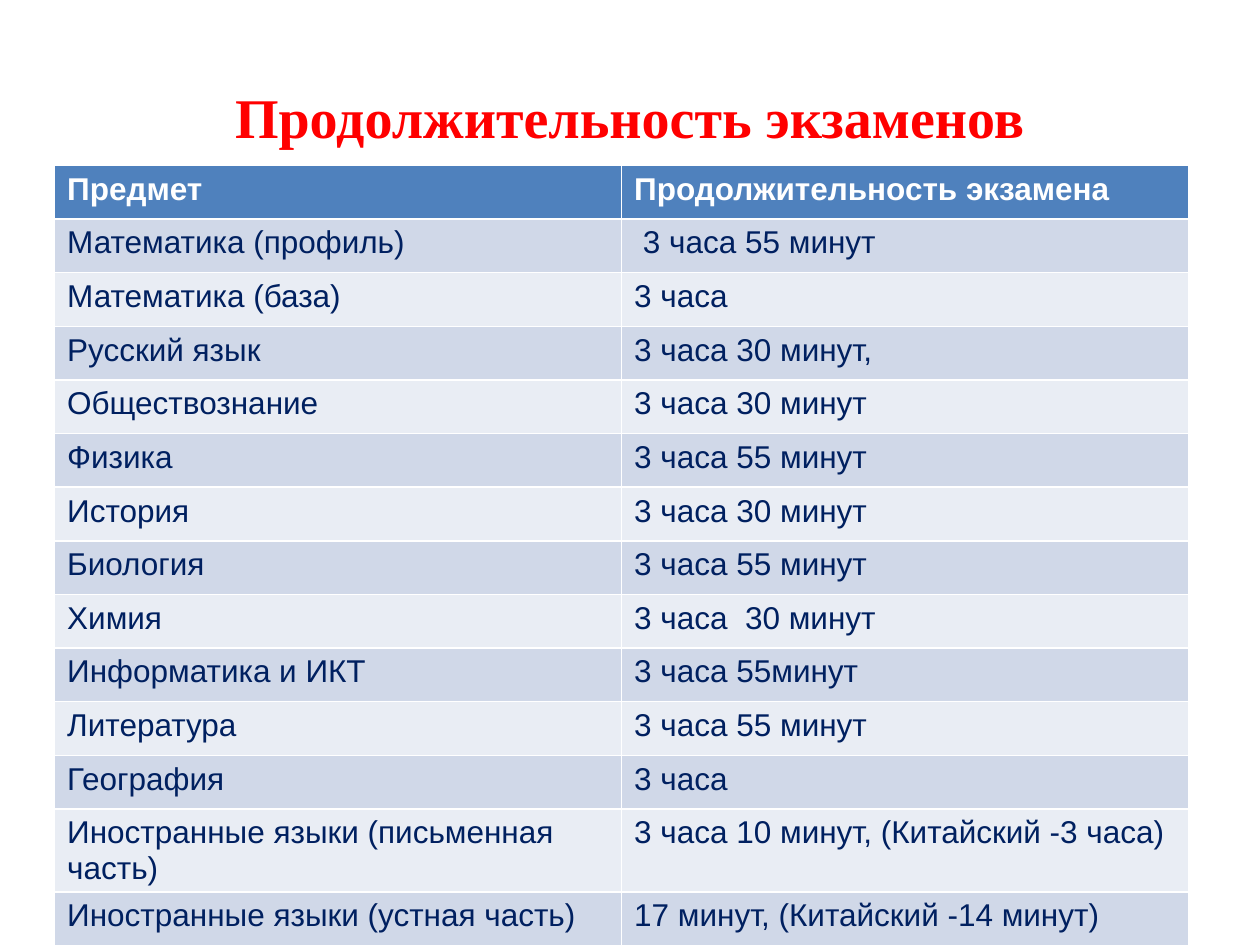
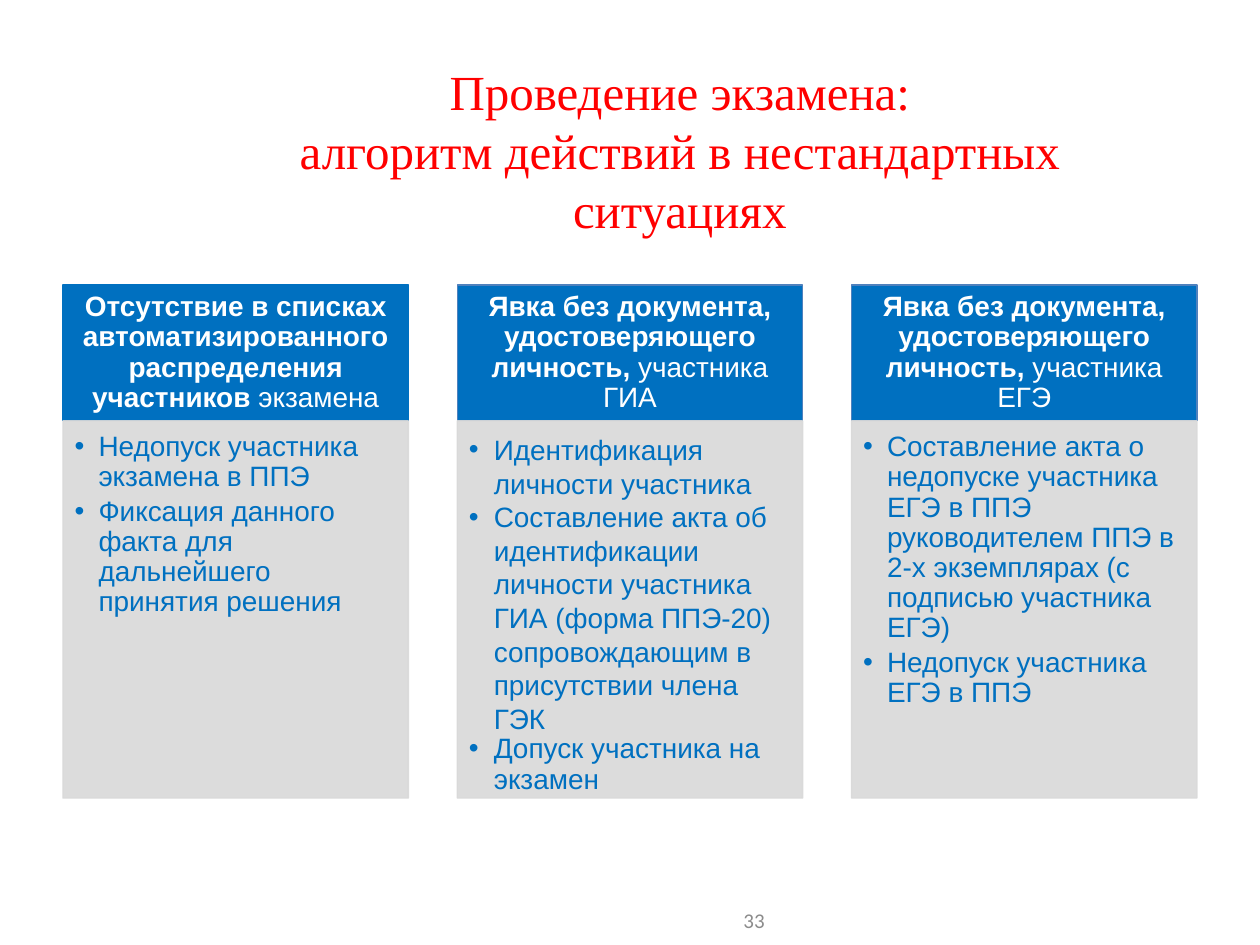
from lxml import etree
from pptx import Presentation
from pptx.dml.color import RGBColor
from pptx.enum import shapes, text
from pptx.oxml import ns
from pptx.util import Pt

RED, WHITE, NAVY = "FF0000", "FFFFFF", "002060"
BLUE, STEEL, GREY = "0070C0", "4F81BD", "D9D9D9"
BAND_FILLS = ("D0D8E8", "E9EDF4")
TITLE_FONT, BODY_FONT, NUMBER_FONT = "Times New Roman", "Arial", "Calibri"
CENTER, MIDDLE = text.PP_ALIGN.CENTER, text.MSO_ANCHOR.MIDDLE

EXAMS = [
    ("Предмет", "Продолжительность экзамена"),
    ("Математика (профиль)", " 3 часа 55 минут"),
    ("Математика (база)", "3 часа"),
    ("Русский язык", "3 часа 30 минут,"),
    ("Обществознание", "3 часа 30 минут"),
    ("Физика", "3 часа 55 минут"),
    ("История", "3 часа 30 минут"),
    ("Биология", "3 часа 55 минут"),
    ("Химия", "3 часа  30 минут"),
    ("Информатика и ИКТ", "3 часа 55минут"),
    ("Литература", "3 часа 55 минут"),
    ("География", "3 часа"),
    ("Иностранные языки (письменная часть)", "3 часа 10 минут, (Китайский -3 часа)"),
    ("Иностранные языки (устная часть)", "17 минут, (Китайский -14 минут)"),
]

TIGHT = {"line_spacing": 0.9, "space_after": Pt(2.4)}
LOOSE = {"line_spacing": 1.0, "space_after": Pt(0)}
NO_DOCUMENT = "Явка без документа, удостоверяющего личность, "

# Heading in bold, its plain ending, heading outline, bullet indent, actions with spacing
SITUATIONS = [
    ("Отсутствие в списках автоматизированного распределения участников ", "экзамена", BLUE, 13.6, [
        ("Недопуск участника экзамена в ППЭ", TIGHT),
        ("Фиксация данного факта для дальнейшего принятия решения", TIGHT),
    ]),
    (NO_DOCUMENT, "участника ГИА", STEEL, 14.2, [
        ("Идентификация личности участника", LOOSE),
        ("Составление акта об идентификации личности участника ГИА (форма ППЭ-20) "
         "сопровождающим в присутствии члена ГЭК", LOOSE),
        ("Допуск участника на экзамен", TIGHT),
    ]),
    (NO_DOCUMENT, "участника ЕГЭ", STEEL, 13.6, [
        ("Составление акта о недопуске участника ЕГЭ в ППЭ руководителем ППЭ "
         "в 2-х экземплярах (с подписью участника ЕГЭ)", TIGHT),
        ("Недопуск участника ЕГЭ в ППЭ", TIGHT),
    ]),
]


def color(hex_value):
    return RGBColor.from_string(hex_value)


def apply(target, values):
    for name, value in values.items():
        setattr(target, name, value)


def add_span(para, words, size, hex_value, font=BODY_FONT, bold=False):
    span = para.add_run()
    span.text = words
    apply(span.font, {"name": font, "size": Pt(size), "bold": bold})
    span.font.color.rgb = color(hex_value)


def set_margins(frame, left, top, right, bottom):
    apply(frame, {"margin_left": Pt(left), "margin_top": Pt(top),
                  "margin_right": Pt(right), "margin_bottom": Pt(bottom)})


def add_page(deck, box, lines, size, bold=False):
    """Add a title-only page; each of the lines starts after a line break."""
    page = deck.slides.add_slide(deck.slide_layouts[5])
    title = page.shapes.title
    apply(title, dict(zip(("left", "top", "width", "height"), map(Pt, box))))
    frame = title.text_frame
    apply(frame, {"word_wrap": True, "vertical_anchor": MIDDLE,
                  "auto_size": text.MSO_AUTO_SIZE.NONE})
    para = frame.paragraphs[0]
    para.alignment = CENTER
    for index, line in enumerate(lines):
        if index:
            para.add_line_break()
        add_span(para, line, size, RED, TITLE_FONT, bold)
    return page


def add_exam_table(page, left, top, width, row_height):
    height = row_height * len(EXAMS)
    table = page.shapes.add_table(len(EXAMS), 2, Pt(left), Pt(top), Pt(width), Pt(height)).table
    for row_index, values in enumerate(EXAMS):
        table.rows[row_index].height = Pt(row_height)
        is_header = row_index == 0
        fill = STEEL if is_header else BAND_FILLS[(row_index - 1) % 2]
        for cell, words in zip(table.rows[row_index].cells, values):
            cell.fill.solid()
            cell.fill.fore_color.rgb = color(fill)
            add_span(cell.text_frame.paragraphs[0], words, 18,
                     WHITE if is_header else NAVY, bold=is_header)


def add_panel(page, box, fill, outline):
    panel = page.shapes.add_shape(shapes.MSO_SHAPE.RECTANGLE, *map(Pt, box))
    panel.shadow.inherit = False
    panel.fill.solid()
    panel.fill.fore_color.rgb = color(fill)
    panel.line.color.rgb = color(outline)
    panel.line.width = Pt(0.75)
    panel.text_frame.word_wrap = True
    return panel


def set_opacity(panel, percent):
    """Apply the opacity to both the fill and the outline."""
    for rgb in panel.fill._xPr.iter(ns.qn("a:srgbClr")):
        etree.SubElement(rgb, ns.qn("a:alpha"), val=str(percent * 1000))


def add_bullet(para, indent):
    properties = para._p.get_or_add_pPr()
    properties.set("marL", str(Pt(indent)))
    properties.set("indent", str(-Pt(indent)))
    etree.SubElement(properties, ns.qn("a:buFont"), typeface=BODY_FONT)
    etree.SubElement(properties, ns.qn("a:buChar"), char="•")


def add_situation(page, left, top, width, situation, head_height=77.6, body_height=215.6):
    bold_words, plain_words, outline, indent, actions = situation
    head = add_panel(page, (left, top, width, head_height), BLUE, outline).text_frame
    head.vertical_anchor = MIDDLE
    set_margins(head, 8.96, 5.12, 8.96, 5.12)
    para = head.paragraphs[0]
    apply(para, {"alignment": CENTER, "line_spacing": 0.9})
    add_span(para, bold_words, 16, WHITE, bold=True)
    add_span(para, plain_words, 16, WHITE)

    body = add_panel(page, (left, top + head_height, width, body_height), GREY, GREY)
    set_opacity(body, 90)
    frame = body.text_frame
    frame.vertical_anchor = text.MSO_ANCHOR.TOP
    set_margins(frame, 6.72, 6.72, 8.96, 10.08)
    for index, (action, spacing) in enumerate(actions):
        para = frame.add_paragraph() if index else frame.paragraphs[0]
        apply(para, {"alignment": text.PP_ALIGN.LEFT, "level": 1, **spacing})
        add_bullet(para, indent)
        add_span(para, action, 16, BLUE)


def add_situations(page, left, top, width, column_width=197.4):
    step = (width - column_width) / (len(SITUATIONS) - 1)
    for index, situation in enumerate(SITUATIONS):
        add_situation(page, left + index * step, top, column_width, situation)


def add_page_number(page, box, number):
    frame = page.shapes.add_textbox(*map(Pt, box)).text_frame
    apply(frame, {"word_wrap": True, "vertical_anchor": MIDDLE})
    para = frame.paragraphs[0]
    para.alignment = text.PP_ALIGN.RIGHT
    add_span(para, number, 12, "8C8C8C", NUMBER_FONT)


def main():
    deck = Presentation()
    deck.slide_width, deck.slide_height = Pt(720), Pt(540)

    durations = add_page(deck, (36, 21.6, 648, 90), ["Продолжительность экзаменов"], 32, bold=True)
    add_exam_table(durations, 31.2, 94.5, 648, 30.67)

    algorithm = add_page(deck, (133.2, 43.2, 510.5, 85),
                         ["Проведение экзамена:", "алгоритм действий в нестандартных ситуациях"], 28)
    add_situations(algorithm, 36, 162.9, 648)
    add_page_number(algorithm, (276, 511.2, 168, 28.8), "33")

    deck.save("out.pptx")


if __name__ == "__main__":
    main()
